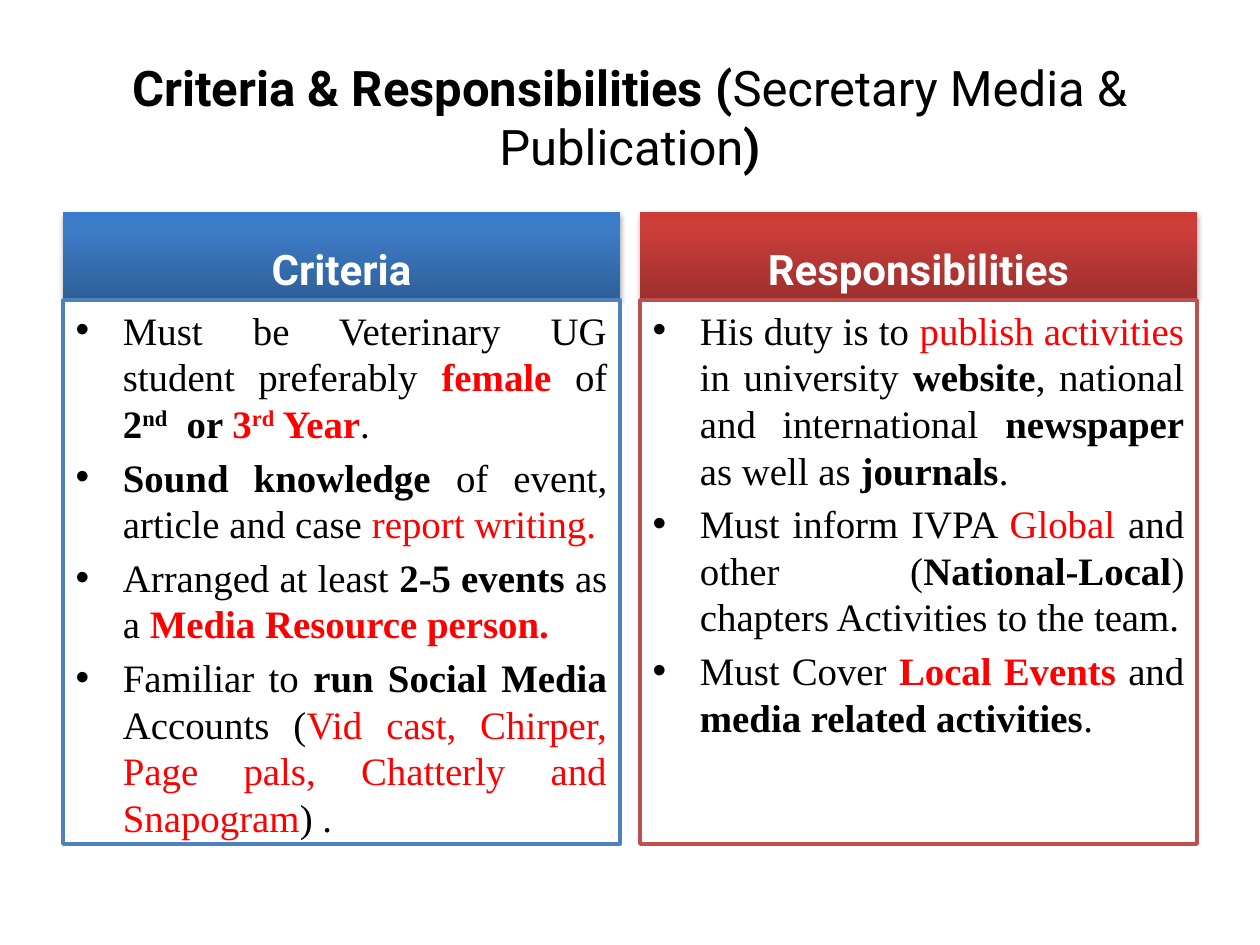
from copy import deepcopy
from dataclasses import dataclass
from pptx import Presentation
from pptx import util as u
from pptx.dml.color import RGBColor
from pptx.enum import text as t
from pptx.oxml import parse_xml
from pptx.oxml.ns import nsdecls


@dataclass(frozen=True)
class Theme:
    ink: str = "000000"
    red: str = "FF0000"
    white: str = "FFFFFF"
    head: str = "Roboto"
    body: str = "Times New Roman"
    title: float = 28
    label: float = 24
    list: float = 22.2
    blue_fade: tuple = ("2F5F99", "3D7CC7", "3A7CCB")
    red_fade: tuple = ("9C2F2D", "CB3E3A", "CE3B37")
    blue_edge: str = "4F81BD"
    red_edge: str = "C0504D"


THEME = Theme()
SCALE = 914400 / 126

CRITERIA = [
    [("Must be Veterinary UG student preferably ", ""), ("female ", "br"), ("of ", ""),
     ("2", "b"), ("nd", "b^"), ("  or ", "b"), ("3", "br"), ("rd", "br^"),
     (" Year", "br"), (". ", "")],
    [("Sound knowledge ", "b"), ("of event, article and case ", ""), ("report writing.", "r")],
    [("Arranged at least ", ""), ("2-5 events ", "b"), ("as a ", ""),
     ("Media Resource person.", "br")],
    [("Familiar to ", ""), ("run Social Media ", "b"), ("Accounts (", ""),
     ("Vid cast, Chirper, Page pals, Chatterly and Snapogram", "r"), (") .", "")],
]
DUTIES = [
    [("His duty is to ", ""), ("publish activities ", "r"), ("in university ", ""),
     ("website", "b"), (", national and international ", ""), ("newspaper", "b"),
     (" as well as ", ""), ("journals", "b"), (".", "")],
    [("Must inform IVPA ", ""), ("Global", "r"), (" and other (", ""),
     ("National-Local", "b"), (") chapters Activities to the team.", "")],
    [("Must Cover ", ""), ("Local Events", "br"), (" and ", ""),
     ("media related activities", "b"), (".", "")],
]


def px(n):
    return u.Emu(round(n * SCALE))


def rgb(hue):
    return RGBColor.from_string(hue)


def place(shape, box):
    shape.left, shape.top, shape.width, shape.height = map(px, box)
    shape.text_frame.auto_size = t.MSO_AUTO_SIZE.NONE


def write(para, runs, face, size, hue):
    for words, marks in runs:
        run = para.add_run()
        run.text = words
        font = run.font
        font.name, font.size = face, u.Pt(size)
        font.bold = "b" in marks
        font.color.rgb = rgb(THEME.red if "r" in marks else hue)
        if "^" in marks:
            run._r.get_or_add_rPr().set("baseline", "30000")


def fade(shape, hues):
    fill = shape.fill
    fill.gradient()
    fill.gradient_angle = 90
    stops = shape._element.spPr.xpath("a:gradFill/a:gsLst")[0]
    stops.append(deepcopy(stops[-1]))
    for stop, hue, spot in zip(fill.gradient_stops, hues, (0, 0.8, 1)):
        stop.color.rgb = rgb(hue)
        stop.position = spot


def shade(shape):
    shape._element.spPr.append(parse_xml(
        f'<a:effectLst {nsdecls("a")}><a:outerShdw blurRad="40000" dist="23000" '
        'dir="5400000" rotWithShape="0"><a:srgbClr val="000000">'
        '<a:alpha val="35000"/></a:srgbClr></a:outerShdw></a:effectLst>'))


def title(shape, box):
    place(shape, box)
    runs = [("Criteria & Responsibilities (", "b"),
            ("Secretary Media & Publication", ""), (")", "b")]
    shape.text_frame.vertical_anchor = t.MSO_ANCHOR.MIDDLE
    para = shape.text_frame.paragraphs[0]
    para.alignment = t.PP_ALIGN.CENTER
    write(para, runs, THEME.head, THEME.title, THEME.ink)


def column(head, body, box, label, items, hues, edge):
    left, top, width, height = box
    cap = 88
    place(head, (left, top, width, cap))
    fade(head, hues)
    shade(head)
    head.text_frame.vertical_anchor = t.MSO_ANCHOR.BOTTOM
    para = head.text_frame.paragraphs[0]
    para.alignment = t.PP_ALIGN.CENTER
    write(para, [(label, "b")], THEME.head, THEME.label, THEME.white)

    place(body, (left, top + cap, width, height - cap))
    body.fill.solid()
    body.fill.fore_color.rgb = rgb(THEME.white)
    body.line.color.rgb = rgb(edge)
    body.line.width = u.Pt(2)
    frame = body.text_frame
    for i, runs in enumerate(items):
        para = frame.add_paragraph() if i else frame.paragraphs[0]
        para.alignment = t.PP_ALIGN.JUSTIFY
        para.space_before = u.Pt(4)
        write(para, runs, THEME.body, THEME.list, THEME.ink)


def main():
    deck = Presentation()
    deck.slide_width, deck.slide_height = px(1260), px(945)
    slide = deck.slides.add_slide(deck.slide_layouts.get_by_name("Comparison"))
    name, *parts = slide.placeholders
    title(name, (0, 38, 1260, 157))
    sides = [("Criteria", CRITERIA, THEME.blue_fade, THEME.blue_edge),
             ("Responsibilities", DUTIES, THEME.red_fade, THEME.red_edge)]
    for i, side in enumerate(sides):
        column(*parts[2 * i:2 * i + 2], (63 + i * 577, 212, 557, 632), *side)
    deck.save("out.pptx")


if __name__ == "__main__":
    main()
